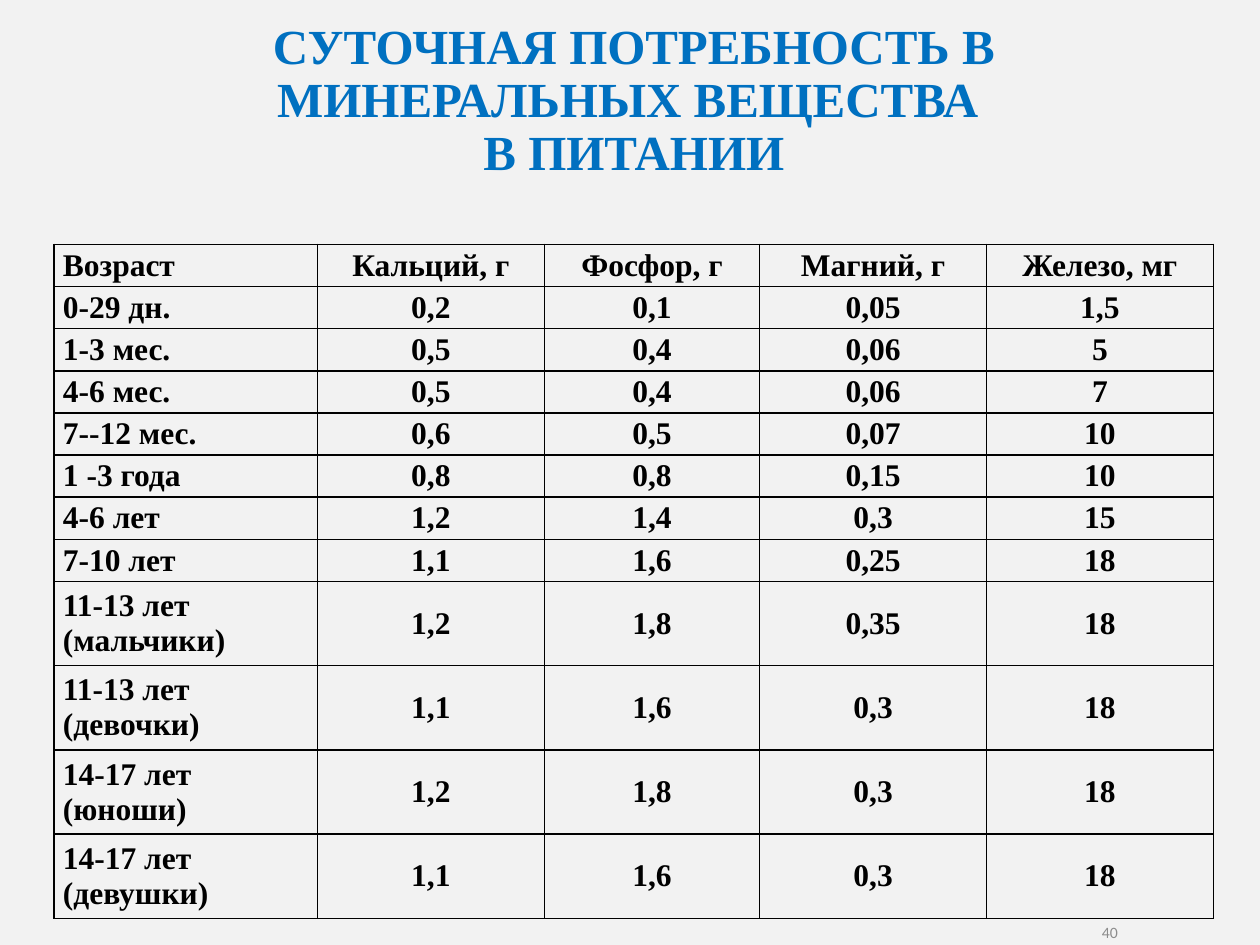
import pptx
import pptx.dml.color
import pptx.enum.text
import pptx.oxml
import pptx.oxml.ns
import pptx.util
from pptx.util import Inches

RGBColor = pptx.dml.color.RGBColor
PP_ALIGN = pptx.enum.text.PP_ALIGN
MSO_ANCHOR = pptx.enum.text.MSO_ANCHOR

BACKGROUND = RGBColor(0xF2, 0xF2, 0xF2)
BLUE = RGBColor(0x00, 0x70, 0xC0)
BLACK = RGBColor(0x00, 0x00, 0x00)
GRAY = RGBColor(0x8C, 0x8C, 0x8C)
SERIF = "Times New Roman"

TITLE = ["СУТОЧНАЯ ПОТРЕБНОСТЬ В МИНЕРАЛЬНЫХ ВЕЩЕСТВА ", "В ПИТАНИИ"]
PAGE_NUMBER = "40"
NEEDS = [
    ("Возраст", "Кальций, г", "Фосфор, г", "Магний, г", "Железо, мг"),
    ("0-29 дн.", "0,2", "0,1", "0,05", "1,5"),
    ("1-3 мес.", "0,5", "0,4", "0,06", "5"),
    ("4-6 мес.", "0,5", "0,4", "0,06", "7"),
    ("7--12 мес.", "0,6", "0,5", "0,07", "10"),
    ("1 -3 года", "0,8", "0,8", "0,15", "10"),
    ("4-6 лет", "1,2", "1,4", "0,3", "15"),
    ("7-10 лет", "1,1", "1,6", "0,25", "18"),
    ("11-13 лет (мальчики)", "1,2", "1,8", "0,35", "18"),
    ("11-13 лет (девочки)", "1,1", "1,6", "0,3", "18"),
    ("14-17 лет (юноши)", "1,2", "1,8", "0,3", "18"),
    ("14-17 лет (девушки)", "1,1", "1,6", "0,3", "18"),
]
SLIDE_WIDTH, SLIDE_HEIGHT = 10, 7.5
COLUMN_WIDTHS = [2.09, 1.8, 1.71, 1.8, 1.8]
TABLE_TOP, TABLE_HEIGHT = 1.94, 5.35
TABLE_BOTTOM = TABLE_TOP + TABLE_HEIGHT


def write(frame, *lines, size=18, font=SERIF, color=BLACK, bold=True,
          align=PP_ALIGN.CENTER, spacing=None):
    frame.word_wrap = True
    for index, line in enumerate(lines):
        paragraph = frame.add_paragraph() if index else frame.paragraphs[0]
        paragraph.alignment = align
        paragraph.line_spacing = spacing
        run = paragraph.add_run()
        run.text = line
        run.font.size = pptx.util.Pt(size)
        run.font.name = font
        run.font.bold = bold
        run.font.color.rgb = color


def outline(cell):
    properties = cell._tc.get_or_add_tcPr()
    for side in ("lnL", "lnR", "lnT", "lnB"):
        properties.append(pptx.oxml.parse_xml(
            f'<a:{side} {pptx.oxml.ns.nsdecls("a")} w="{pptx.util.Pt(1)}">'
            f'<a:solidFill><a:srgbClr val="{BLACK}"/></a:solidFill></a:{side}>'))


def add_needs_table(slide):
    table = slide.shapes.add_table(
        len(NEEDS), len(COLUMN_WIDTHS), Inches(0.43), Inches(TABLE_TOP),
        Inches(sum(COLUMN_WIDTHS)), Inches(TABLE_HEIGHT)).table
    table.first_row = False
    table.horz_banding = False
    for column, width in zip(table.columns, COLUMN_WIDTHS):
        column.width = Inches(width)
    line_counts = [2 if "(" in needs[0] else 1 for needs in NEEDS]
    line_height = TABLE_HEIGHT / sum(line_counts)
    for row, needs, count in zip(table.rows, NEEDS, line_counts):
        row.height = Inches(line_height * count)
        for index, (cell, value) in enumerate(zip(row.cells, needs)):
            cell.margin_left = cell.margin_right = Inches(0.07)
            cell.margin_top = cell.margin_bottom = 0
            cell.vertical_anchor = MSO_ANCHOR.MIDDLE
            write(cell.text_frame, value,
                  align=PP_ALIGN.CENTER if index else PP_ALIGN.LEFT)
            outline(cell)
            cell.fill.background()


def main():
    deck = pptx.Presentation()
    deck.slide_width = Inches(SLIDE_WIDTH)
    deck.slide_height = Inches(SLIDE_HEIGHT)
    slide = deck.slides.add_slide(deck.slide_layouts[6])
    slide.background.fill.solid()
    slide.background.fill.fore_color.rgb = BACKGROUND

    page_number = slide.shapes.add_textbox(
        Inches(8.54), Inches(TABLE_BOTTOM),
        Inches(0.43), Inches(SLIDE_HEIGHT - TABLE_BOTTOM)).text_frame
    page_number.margin_top = page_number.margin_bottom = 0
    page_number.vertical_anchor = MSO_ANCHOR.MIDDLE
    write(page_number, PAGE_NUMBER, size=9, font="Calibri", color=GRAY,
          bold=False, align=PP_ALIGN.RIGHT)

    add_needs_table(slide)

    title = slide.shapes.add_textbox(
        Inches(0.97), Inches(0.13), Inches(8.12), Inches(1.43)).text_frame
    write(title, *TITLE, size=28, color=BLUE, spacing=0.9)

    deck.save("out.pptx")


if __name__ == "__main__":
    main()
